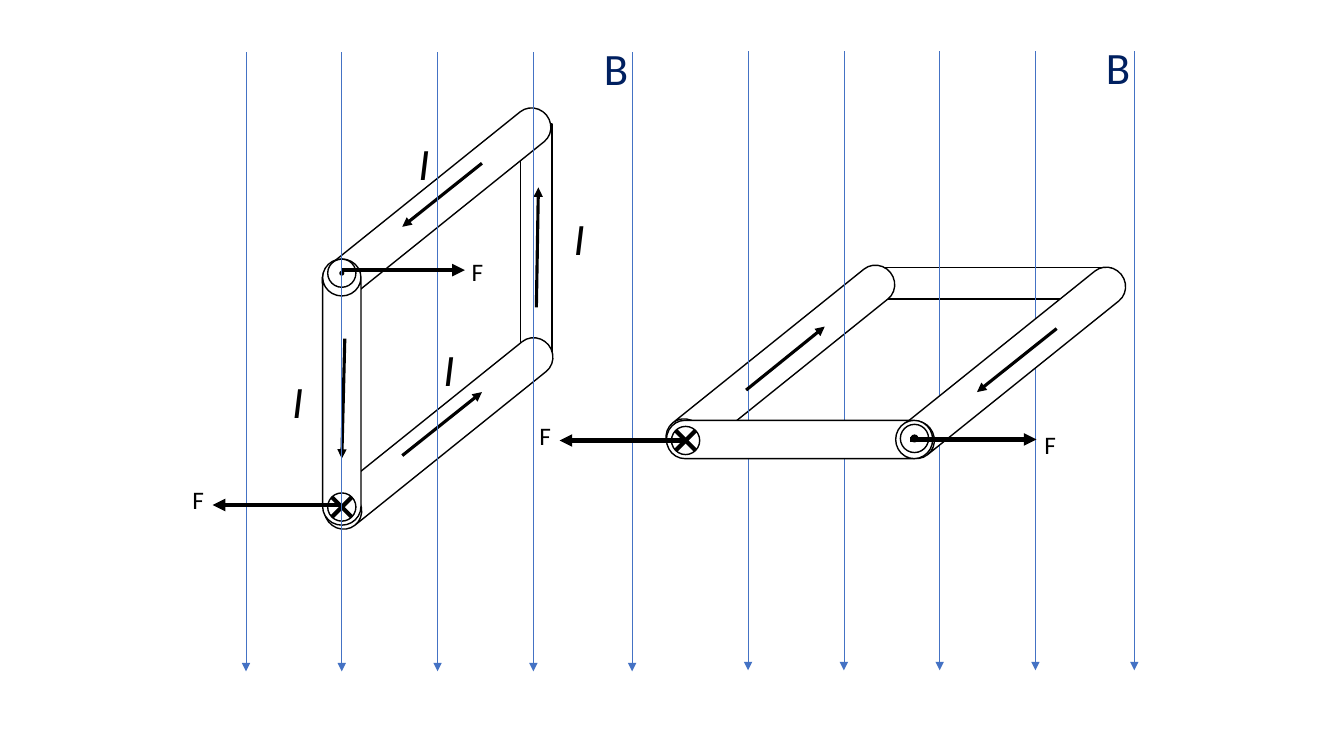
from lxml.etree import SubElement
from pptx import Presentation
from pptx.dml.color import RGBColor
from pptx.enum.shapes import MSO_CONNECTOR, MSO_SHAPE
from pptx.enum.text import MSO_AUTO_SIZE
from pptx.oxml.ns import qn
from pptx.util import Inches, Pt

COLOURS = {"ink": "000000", "rod": "FFFFFF", "field": "4472C4", "navy": "002060"}
FONT = "Calibri"
ROD_WIDTH, BAR_WIDTH, SLANTED_LENGTH, UPRIGHT_LENGTH, BAR_LENGTH = 0.38, 0.31, 2.8, 2.64, 2.36
SLANT = 231.2
SYMBOL_SIZE, CROSS_REACH = 0.28, 0.1
FIELD_OFFSETS = (0, 0.95, 1.9, 2.85, 3.83)
FIELD_LENGTH = 6.14

# Rods and bars: centre x, centre y, length, rotation
LEFT_BAR = (5.32, 2.41, BAR_LENGTH, 0)
LEFT_RODS = [(4.35, 4.3, SLANTED_LENGTH, SLANT), (4.33, 2.02, SLANTED_LENGTH, SLANT),
             (3.39, 3.89, UPRIGHT_LENGTH, 0)]
RIGHT_BAR = (9.84, 2.81, BAR_LENGTH, 90)
RIGHT_BACK_ROD = (7.74, 3.58, SLANTED_LENGTH, SLANT)
RIGHT_FRONT_RODS = [(10.03, 3.6, SLANTED_LENGTH, SLANT), (7.93, 4.36, UPRIGHT_LENGTH, 90)]

# Arrows: start point, end point
LEFT_CURRENTS = [((4.78, 1.62), (3.99, 2.25)), ((3.42, 3.36), (3.39, 4.55)),
                 ((3.99, 4.52), (4.78, 3.89)), ((5.32, 3.05), (5.34, 1.86))]
RIGHT_CURRENTS = [((10.48, 3.26), (9.69, 3.89)), ((7.4, 3.87), (8.18, 3.24))]
CURRENT_LABELS = [(4.05, 1.3), (2.8, 3.66), (4.3, 3.34), (5.59, 2.04)]

# Forces: start x, end x, y, label corner
LEFT_FORCES = [(3.39, 4.61, 2.68, (4.58, 2.49)), (3.36, 2.11, 5.01, (1.81, 4.76))]
RIGHT_FORCES = [(6.79, 5.55, 4.37, (5.25, 4.12)), (9.03, 10.28, 4.36, (10.26, 4.21))]

presentation = Presentation()
presentation.slide_width, presentation.slide_height = Inches(13.33), Inches(7.5)
slide = presentation.slides.add_slide(presentation.slide_layouts[6])


def colour(name):
    return RGBColor.from_string(COLOURS[name])


def add_centred(kind, x, y, width, height, fill=None, outlined=True):
    shape = slide.shapes.add_shape(kind, Inches(x - width / 2), Inches(y - height / 2),
                                   Inches(width), Inches(height))
    shape.shadow.inherit = False
    if fill:
        shape.fill.solid()
        shape.fill.fore_color.rgb = colour(fill)
    else:
        shape.fill.background()
    if outlined:
        shape.line.color.rgb = colour("ink")
        shape.line.width = Pt(1)
    else:
        shape.line.fill.background()
    return shape


def add_bar(x, y, length, rotation):
    add_centred(MSO_SHAPE.RECTANGLE, x, y, BAR_WIDTH, length).rotation = rotation


def add_rod(x, y, length, rotation):
    rod = add_centred(MSO_SHAPE.CAN, x, y, ROD_WIDTH, length, "rod")
    rod.adjustments[0] = 0.965
    rod.rotation = rotation


def add_line(start, end, width, line_colour="ink", arrow=True):
    line = slide.shapes.add_connector(MSO_CONNECTOR.STRAIGHT, *map(Inches, (*start, *end)))
    line.line.color.rgb = colour(line_colour)
    line.line.width = Pt(width)
    if arrow:
        SubElement(line.line._get_or_add_ln(), qn("a:tailEnd"), type="triangle")
    SubElement(line._element.spPr, qn("a:effectLst"))


def add_label(text, corner, size, width, height, text_colour="ink", italic=False):
    box = slide.shapes.add_textbox(*map(Inches, (*corner, width, height)))
    box.text_frame.word_wrap = False
    box.text_frame.auto_size = MSO_AUTO_SIZE.SHAPE_TO_FIT_TEXT
    paragraph = box.text_frame.paragraphs[0]
    paragraph.text = text
    paragraph.font.name, paragraph.font.size = FONT, Pt(size)
    paragraph.font.italic = italic
    paragraph.font.color.rgb = colour(text_colour)


def add_into_page(x, y):
    """Circled cross: current flowing away from the viewer."""
    add_centred(MSO_SHAPE.OVAL, x, y, SYMBOL_SIZE, SYMBOL_SIZE)
    for rise in (CROSS_REACH, -CROSS_REACH):
        add_line((x - CROSS_REACH, y + rise), (x + CROSS_REACH, y - rise), 3, arrow=False)


def add_out_of_page(x, y, dot_size):
    """Circled dot: current flowing towards the viewer."""
    add_centred(MSO_SHAPE.OVAL, x, y, SYMBOL_SIZE, SYMBOL_SIZE)
    add_centred(MSO_SHAPE.OVAL, x, y, dot_size, dot_size, "ink", outlined=False)


def add_currents(arrows):
    for start, end in arrows:
        add_line(start, end, 2.25)


def add_field(left, top):
    for offset in FIELD_OFFSETS:
        add_line((left + offset, top), (left + offset, top + FIELD_LENGTH), 0.5, "field")
    add_label("B", (left + FIELD_OFFSETS[-1] - 0.38, top - 0.17), 32, 0.45, 0.64, "navy")


def add_forces(forces):
    for start_x, end_x, y, corner in forces:
        add_line((start_x, y), (end_x, y), 3)
        add_label("F", corner, 18, 0.32, 0.4)


def main():
    add_bar(*RIGHT_BAR)
    add_rod(*RIGHT_BACK_ROD)

    add_bar(*LEFT_BAR)
    for rod in LEFT_RODS:
        add_rod(*rod)
    add_into_page(3.39, 5.03)
    add_out_of_page(3.39, 2.71, 0.05)
    add_currents(LEFT_CURRENTS)
    for corner in CURRENT_LABELS:
        add_label("I", corner, 32, 0.32, 0.64, italic=True)
    add_field(2.44, 0.52)
    add_forces(LEFT_FORCES)

    add_field(7.42, 0.51)
    for rod in RIGHT_FRONT_RODS:
        add_rod(*rod)
    add_out_of_page(9.07, 4.35, 0.08)
    add_into_page(6.8, 4.37)
    add_forces(RIGHT_FORCES)
    add_currents(RIGHT_CURRENTS)
    presentation.save("out.pptx")


if __name__ == "__main__":
    main()
